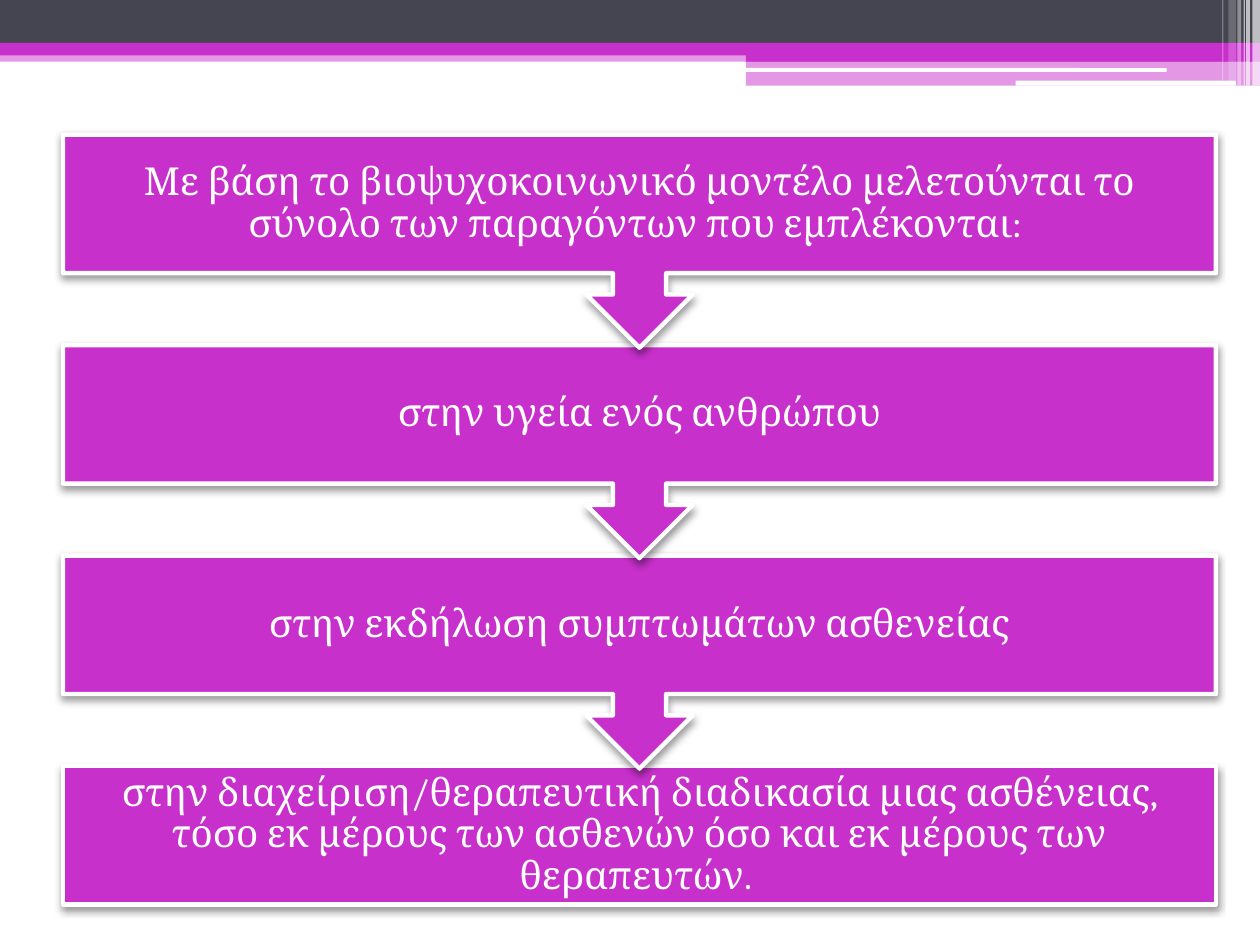
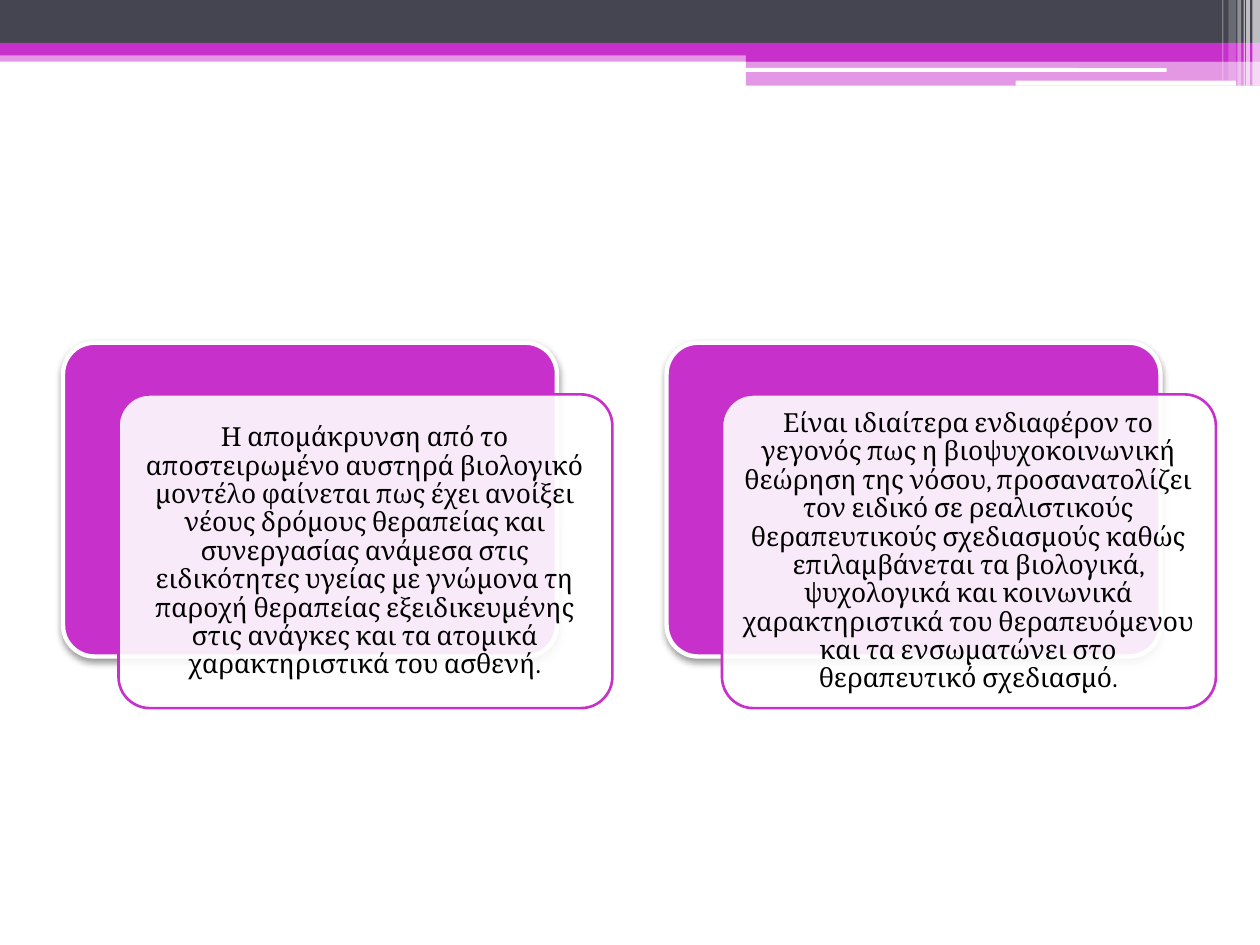
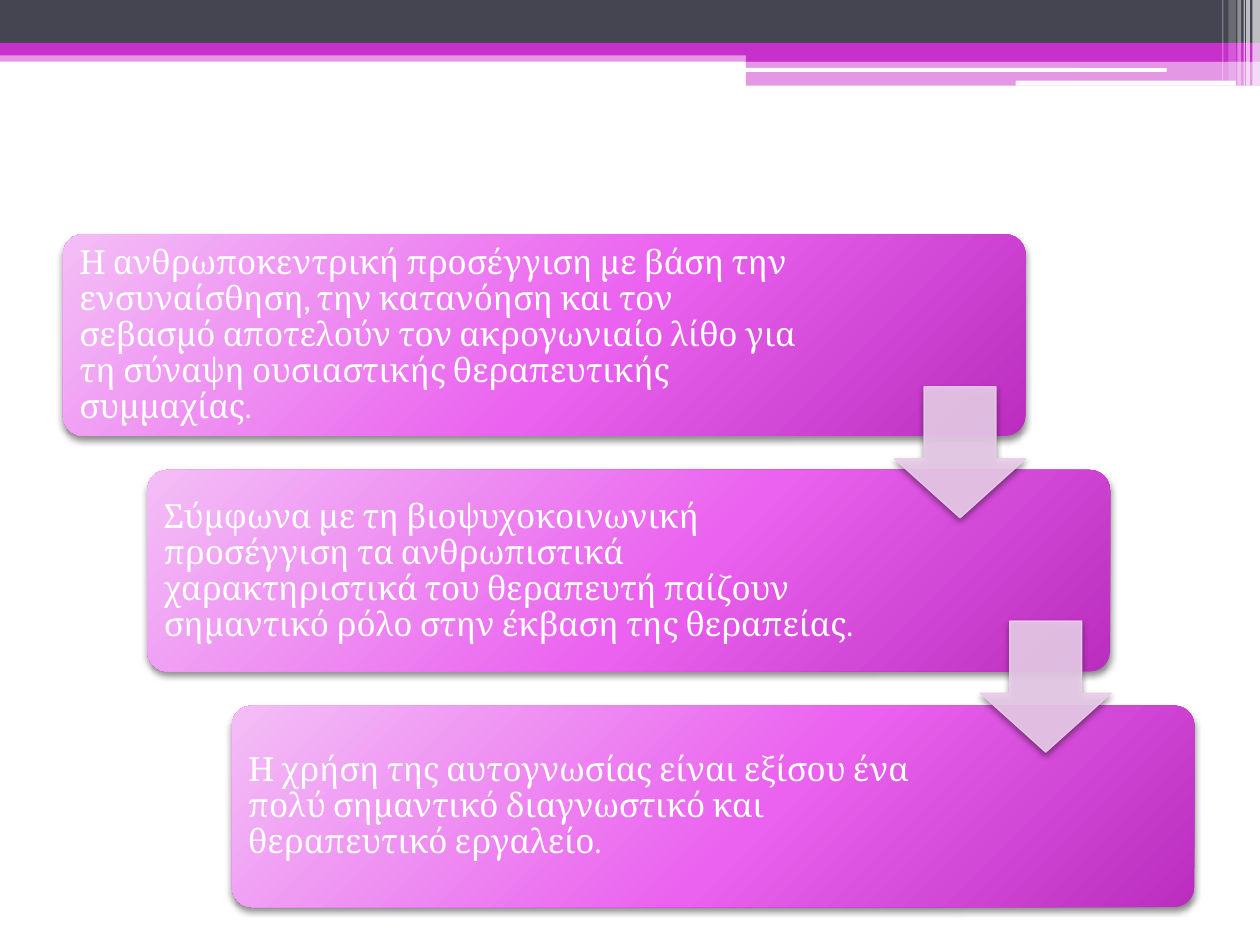
from lxml import etree
from pptx import Presentation
from pptx import util as u
from pptx.dml.color import RGBColor
from pptx.enum import shapes, text
from pptx.oxml.ns import qn

COLORS = {
    "accent": "C830CC", "dark": "454551", "white": "FFFFFF", "black": "000000",
    "light": "F3BEF6", "bright": "EA62EF", "deep": "BA2DBE", "pale": "EBCDEC",
}
FONT = "Cambria"
GRADIENT = [(0, "light"), (55, "bright"), (100, "deep")]
GRADIENT_RECT = {"l": -40, "t": -90, "r": 140, "b": 190}
SHAPE = shapes.MSO_SHAPE
ALIGN = text.PP_ALIGN

BANDS = [
    (0, 0.4, 10, 0.09, "accent", 50),
    (0, 0, 10, 0.34, "dark", 100),
    (0, 0.34, 10, 0.1, "accent", 100),
    (5.92, 0.39, 4.08, 0.1, "accent", 100),
    (5.92, 0.48, 4.08, 0.2, "accent", 50),
]
PILLS = [(5.91, 0.54, 3.35, 0.03), (8.06, 0.64, 1.75, 0.04)]
STRIPES = [
    (9.94, 0.06, 0.68, 65), (9.89, 0.03, 0.68, 65), (9.87, 0.01, 0.68, 60),
    (9.82, 0.03, 0.68, 40), (9.75, 0.06, 0.64, 20), (9.7, 0.01, 0.64, 30),
]
FACTORS = [
    "Με βάση το βιοψυχοκοινωνικό μοντέλο μελετούνται το σύνολο των παραγόντων που εμπλέκονται: ",
    "στην υγεία ενός ανθρώπου",
    "στην εκδήλωση συμπτωμάτων ασθενείας",
    "στην διαχείριση/θεραπευτική διαδικασία μιας ασθένειας, τόσο εκ μέρους των ασθενών "
    "όσο και εκ μέρους των θεραπευτών. ",
]
CARDS = [
    "Η απομάκρυνση από το αποστειρωμένο αυστηρά βιολογικό μοντέλο φαίνεται πως έχει ανοίξει "
    "νέους δρόμους θεραπείας και συνεργασίας ανάμεσα στις ειδικότητες υγείας με γνώμονα τη "
    "παροχή θεραπείας εξειδικευμένης στις ανάγκες και τα ατομικά χαρακτηριστικά του ασθενή.",
    "Είναι ιδιαίτερα ενδιαφέρον το γεγονός πως η βιοψυχοκοινωνική θεώρηση της νόσου, "
    "προσανατολίζει τον ειδικό σε ρεαλιστικούς θεραπευτικούς σχεδιασμούς καθώς "
    "επιλαμβάνεται τα βιολογικά, ψυχολογικά και κοινωνικά χαρακτηριστικά του "
    "θεραπευόμενου και τα ενσωματώνει στο θεραπευτικό σχεδιασμό.",
]
STEPS = [
    ("Η ανθρωποκεντρική προσέγγιση με βάση την ενσυναίσθηση, την κατανόηση και τον σεβασμό "
     "αποτελούν τον ακρογωνιαίο λίθο για τη σύναψη ουσιαστικής θεραπευτικής συμμαχίας.", 5.91),
    ("Σύμφωνα με τη βιοψυχοκοινωνική προσέγγιση τα ανθρωπιστικά χαρακτηριστικά του θεραπευτή "
     "παίζουν σημαντικό ρόλο στην έκβαση της θεραπείας.", 5.83),
    ("Η χρήση της αυτογνωσίας είναι εξίσου ένα πολύ σημαντικό διαγνωστικό και θεραπευτικό "
     "εργαλείο.", 5.83),
]


def rgb(name):
    return RGBColor.from_string(COLORS[name])


def add_color(parent, name, alpha=100):
    clr = etree.SubElement(parent, qn("a:srgbClr"), val=COLORS[name])
    if alpha < 100:
        etree.SubElement(clr, qn("a:alpha"), val=str(alpha * 1000))


def set_alpha(sp, alpha):
    for clr in sp.element.spPr.iter(qn("a:srgbClr")):
        etree.SubElement(clr, qn("a:alpha"), val=str(alpha * 1000))


def add_box(s, kind, x, y, w, h, fill, line=None, line_pt=0, alpha=100, adj=()):
    sp = s.shapes.add_shape(kind, *map(u.Inches, (x, y, w, h)))
    for i, value in enumerate(adj):
        sp.adjustments[i] = value
    sp.fill.solid()
    sp.fill.fore_color.rgb = rgb(fill)
    if alpha < 100:
        set_alpha(sp, alpha)
    if line:
        sp.line.color.rgb = rgb(line)
        sp.line.width = u.Pt(line_pt)
    else:
        sp.line.fill.background()
    sp.shadow.inherit = False
    return sp


def add_shadow(sp, alpha, blur):
    effects = sp.element.spPr.find(qn("a:effectLst"))
    shadow = etree.SubElement(effects, qn("a:outerShdw"), blurRad=str(u.Pt(blur)),
                              dist=str(u.Pt(2)), dir="5400000", rotWithShape="0")
    add_color(shadow, "black", alpha)


def set_gradient(sp):
    grad = etree.Element(qn("a:gradFill"), rotWithShape="1")
    stops = etree.SubElement(grad, qn("a:gsLst"))
    for pos, name in GRADIENT:
        add_color(etree.SubElement(stops, qn("a:gs"), pos=str(pos * 1000)), name)
    radial = etree.SubElement(grad, qn("a:path"), path="circle")
    etree.SubElement(radial, qn("a:fillToRect"),
                     {side: str(v * 1000) for side, v in GRADIENT_RECT.items()})
    spPr = sp.element.spPr
    spPr.replace(spPr.find(qn("a:solidFill")), grad)


def add_label(s, x, y, w, h, words, size, color, inset, align):
    tf = s.shapes.add_textbox(*map(u.Inches, (x, y, w, h))).text_frame
    tf.word_wrap = True
    tf.vertical_anchor = text.MSO_ANCHOR.MIDDLE
    tf.margin_left = tf.margin_right = tf.margin_top = tf.margin_bottom = u.Inches(inset)
    p = tf.paragraphs[0]
    p.text = words
    p.alignment = align
    p.line_spacing = 0.9
    p.font.name = FONT
    p.font.size = u.Pt(size)
    p.font.color.rgb = rgb(color)


def add_bands(s, layout):
    parts = [add_box(s, SHAPE.RECTANGLE, x, y, w, h, fill, alpha=alpha)
             for x, y, w, h, fill, alpha in BANDS]
    parts += [add_box(s, SHAPE.ROUNDED_RECTANGLE, *at, "white") for at in PILLS]
    parts += [add_box(s, SHAPE.RECTANGLE, x, 0, w, h, "white", alpha=alpha)
              for x, w, h, alpha in STRIPES]
    for sp in parts:
        layout.shapes.element.append(sp.element)


def add_factor(s, y, words, last):
    kind, h = (SHAPE.RECTANGLE, 1.1) if last else (SHAPE.UP_ARROW_CALLOUT, 1.69)
    sp = add_box(s, kind, 0.5, y, 9.15, h, "accent", "white", 2.5)
    sp.rotation = 0 if last else 180
    add_shadow(sp, 40, 4.1)
    add_label(s, 0.5, y, 9.15, 1.1, words, 22, "white", 0.17, ALIGN.CENTER)


def add_card(s, x, words):
    back = add_box(s, SHAPE.ROUNDED_RECTANGLE, x, 2.72, 3.92, 2.49, "accent",
                   "white", 2.5, adj=[0.1])
    add_shadow(back, 40, 4.1)
    add_box(s, SHAPE.ROUNDED_RECTANGLE, x + 0.44, 3.13, 3.92, 2.49, "white",
            "accent", 1.5, alpha=90, adj=[0.1])
    add_label(s, x + 0.51, 3.21, 3.77, 2.34, words, 15, "black", 0.06, ALIGN.CENTER)


def add_step(s, x, y, words, label_w):
    sp = add_box(s, SHAPE.ROUNDED_RECTANGLE, x, y, 7.64, 1.6, "bright", adj=[0.1])
    set_gradient(sp)
    add_shadow(sp, 45, 4)
    add_label(s, x + 0.05, y + 0.05, label_w, 1.51, words, 19, "white", 0.08, ALIGN.LEFT)


def add_step_arrow(s, x, y):
    sp = add_box(s, SHAPE.DOWN_ARROW, x, y, 1.04, 1.04, "pale", "pale", 0.75,
                 adj=[0.55, 0.45])
    set_alpha(sp, 90)
    add_shadow(sp, 45, 4)


def main():
    prs = Presentation()
    prs.slide_width, prs.slide_height = u.Inches(10), u.Inches(7.5)
    layout = prs.slide_layouts[6]
    factors, cards, steps = [prs.slides.add_slide(layout) for _ in range(3)]
    add_bands(factors, layout)

    for i in reversed(range(len(FACTORS))):
        add_factor(factors, 1.07 + 1.67 * i, FACTORS[i], i == len(FACTORS) - 1)

    for i, words in enumerate(CARDS):
        add_card(cards, 0.5 + 4.79 * i, words)

    for i, (words, label_w) in enumerate(STEPS):
        add_step(steps, 0.5 + 0.67 * i, 1.86 + 1.87 * i, words, label_w)
    for i in range(len(STEPS) - 1):
        add_step_arrow(steps, 7.1 + 0.68 * i, 3.07 + 1.86 * i)

    prs.save("out.pptx")


if __name__ == "__main__":
    main()
